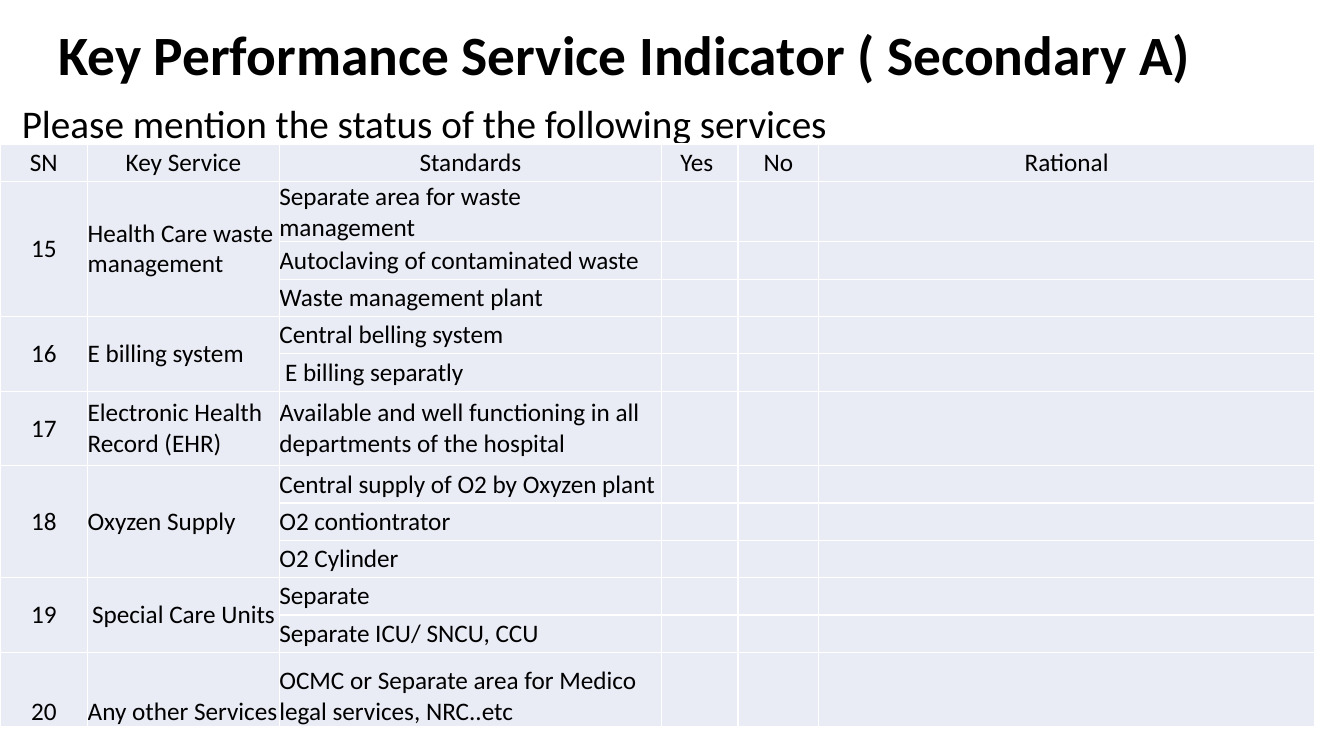
from lxml import etree
from pptx import Presentation
from pptx import util as u
from pptx.dml import color
from pptx.enum import text
from pptx.oxml import ns

FONT = "Calibri"
BLACK, WHITE, PALE = "000000", "FFFFFF", "E9EBF5"
LEFT, CENTER = text.PP_ALIGN.LEFT, text.PP_ALIGN.CENTER
TOP, MIDDLE, BOTTOM = (text.MSO_ANCHOR.TOP, text.MSO_ANCHOR.MIDDLE,
                       text.MSO_ANCHOR.BOTTOM)
LINE, DOUBLE = 0.94, 1.88
COLUMN_WIDTHS = [2.21, 4.83, 9.63, 1.93, 2.03, 12.5]
HEADINGS = ["SN", "Key Service", "Standards", "Yes ", "No", "Rational"]
SERVICES = [
    ("15", "Health Care waste management", LEFT, MIDDLE, [
        ("Separate area for waste management", 1.45),
        ("Autoclaving of contaminated waste", LINE),
        ("Waste management plant", LINE)]),
    ("16", "E billing system", LEFT, MIDDLE, [
        ("Central belling system", LINE),
        (" E billing separatly", LINE)]),
    ("17", "Electronic Health Record (EHR)", LEFT, MIDDLE, [
        ("Available and well functioning in all departments of the hospital", DOUBLE)]),
    ("18", "Oxyzen Supply", LEFT, MIDDLE, [
        ("Central supply of O2 by Oxyzen plant", LINE),
        ("O2 contiontrator", LINE),
        ("O2 Cylinder", LINE)]),
    ("19", "Special Care Units", CENTER, MIDDLE, [
        ("Separate", LINE),
        ("Separate ICU/ SNCU, CCU", LINE)]),
    ("20", "Any other Services", LEFT, BOTTOM, [
        ("OCMC or Separate area for Medico legal services, NRC..etc", DOUBLE)]),
]


def rgb(value):
    return color.RGBColor.from_string(value)


def apply(target, **values):
    for name, value in values.items():
        setattr(target, name, value)


def write(para, words, size, bold=False, **layout):
    apply(para, **layout)
    span = para.add_run()
    span.text = words
    apply(span.font, name=FONT, size=u.Pt(size), bold=bold)
    span.font.color.rgb = rgb(BLACK)


def add_text(page, box, words, size, anchor, **style):
    frame = page.shapes.add_textbox(*map(u.Cm, box)).text_frame
    apply(frame, word_wrap=True, vertical_anchor=anchor)
    write(frame.paragraphs[0], words, size, line_spacing=0.9, **style)


def dress_cell(cell):
    apply(cell, margin_left=0, margin_right=0, margin_top=0, margin_bottom=0)
    cell.fill.solid()
    cell.fill.fore_color.rgb = rgb(PALE)
    properties = cell._tc.get_or_add_tcPr()
    for position, side in enumerate("LRTB"):
        border = etree.Element(ns.qn(f"a:ln{side}"), w=str(u.Pt(1)))
        fill = etree.SubElement(border, ns.qn("a:solidFill"))
        etree.SubElement(fill, ns.qn("a:srgbClr"), val=WHITE)
        properties.insert(position, border)


def fill_cell(cell, words, align, anchor=MIDDLE):
    cell.vertical_anchor = anchor
    write(cell.text_frame.paragraphs[0], words, 18, alignment=align)


def add_services(page, left, top):
    heights = [LINE] + [height for *_, standards in SERVICES
                        for _, height in standards]
    table = page.shapes.add_table(
        len(heights), len(COLUMN_WIDTHS), u.Cm(left), u.Cm(top),
        u.Cm(sum(COLUMN_WIDTHS)), u.Cm(sum(heights))).table
    apply(table, first_row=False, horz_banding=False)
    for column, width in zip(table.columns, COLUMN_WIDTHS):
        column.width = u.Cm(width)
    for row, height in zip(table.rows, heights):
        row.height = u.Cm(height)
    for cell in table.iter_cells():
        dress_cell(cell)
    for index, heading in enumerate(HEADINGS):
        fill_cell(table.cell(0, index), heading, CENTER)

    first = 1
    for number, service, align, anchor, standards in SERVICES:
        last = first + len(standards) - 1
        for index, words, side in ((0, number, CENTER), (1, service, align)):
            cell = table.cell(first, index)
            if last > first:
                cell.merge(table.cell(last, index))
            fill_cell(cell, words, side, anchor)
        for row, (standard, _) in enumerate(standards, first):
            fill_cell(table.cell(row, 2), standard, LEFT, anchor)
        first = last + 1


def main():
    deck = Presentation()
    apply(deck, slide_width=u.Cm(33.87), slide_height=u.Cm(19.05))
    page = deck.slides.add_slide(deck.slide_layouts[6])
    add_text(page, (1.22, 0.61, 30.33, 1.68),
             "Key Performance Service Indicator ( Secondary A)", 39.6, MIDDLE,
             bold=True)
    add_text(page, (0.3, 2.51, 31.78, 14.63),
             "Please mention the status of the following services", 28, TOP,
             space_before=u.Pt(10))
    add_services(page, 0, 3.63)
    deck.save("out.pptx")


if __name__ == "__main__":
    main()
